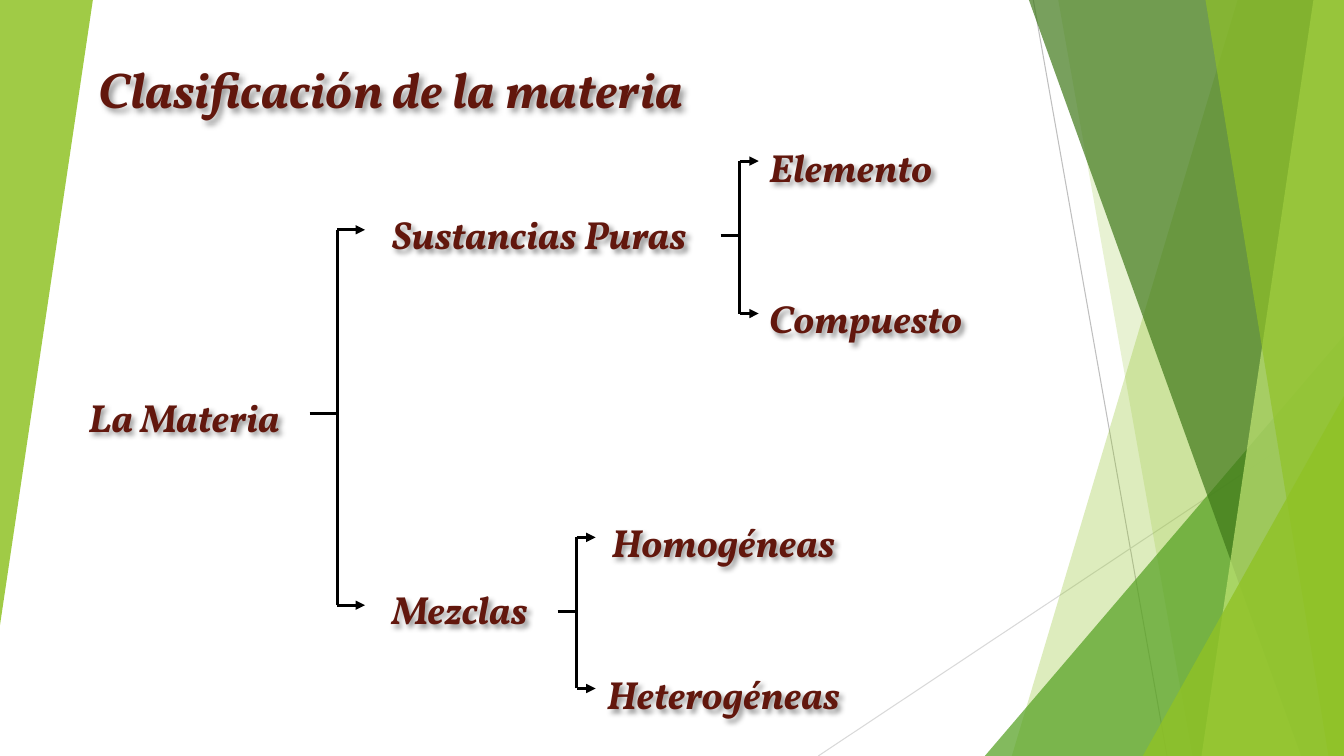
from lxml import etree
from pptx import Presentation
from pptx.dml.color import RGBColor
from pptx.enum.shapes import MSO_CONNECTOR, MSO_SHAPE
from pptx.enum.text import MSO_ANCHOR, MSO_AUTO_SIZE, PP_ALIGN
from pptx.oxml import parse_xml
from pptx.oxml.ns import nsdecls, qn
from pptx.util import Cm, Pt

STRAIGHT = MSO_CONNECTOR.STRAIGHT
TRIANGLE = MSO_SHAPE.ISOSCELES_TRIANGLE
TOP = MSO_ANCHOR.TOP
FIT_SHAPE = MSO_AUTO_SIZE.SHAPE_TO_FIT_TEXT
JUSTIFY = PP_ALIGN.JUSTIFY

MAROON = RGBColor(0x62, 0x17, 0x0D)
BLACK = RGBColor(0x00, 0x00, 0x00)
SILVER = RGBColor(0xBF, 0xBF, 0xBF)
PALE_GREY = RGBColor(0xD9, 0xD9, 0xD9)
LIME = RGBColor(0x90, 0xC2, 0x26)
GREEN = RGBColor(0x54, 0xA0, 0x21)
DARK_GREEN = RGBColor(0x3F, 0x78, 0x19)
PALE_LIME = RGBColor(0xC0, 0xE4, 0x74)

FONT = "Vollkorn"
WIDTH, HEIGHT = 33.87, 19.05
LABEL_HEIGHT = 1.55
STEM_RATIO = 0.49

# left, top, width, text
LABELS = [
    (1.98, 9.6, 7.34, "La Materia"),
    (9.63, 5.0, 8.61, "Sustancias Puras"),
    (9.63, 14.45, 8.61, "Mezclas"),
    (19.13, 3.3, 8.61, "Elemento"),
    (19.13, 7.11, 8.61, "Compuesto"),
    (15.16, 12.75, 8.61, "Homogéneas"),
    (15.04, 16.59, 8.61, "Heterogéneas"),
]
# left, top, width, height
BRACKETS = [
    (7.8, 5.79, 1.4, 9.46),
    (18.16, 4.06, 0.96, 3.84),
    (14.05, 13.54, 0.96, 3.81),
]


def add_line(shapes, start, end, color, weight, arrow=False):
    line = shapes.add_connector(STRAIGHT, *(Cm(value) for value in start + end))
    line.line.color.rgb = color
    line.line.width = Pt(weight)
    if arrow:
        tail = etree.SubElement(line.line._get_or_add_ln(), qn("a:tailEnd"))
        tail.set("type", "triangle")
    etree.SubElement(line._element.spPr, qn("a:effectLst"))


def paint(shape, color, opacity):
    """Fill a borderless shape with a colour of the given opacity in percent."""
    shape.shadow.inherit = False
    shape.line.fill.background()
    shape.fill.solid()
    shape.fill.fore_color.rgb = color
    color_element = shape._element.spPr.find(".//" + qn("a:srgbClr"))
    etree.SubElement(color_element, qn("a:alpha")).set("val", str(opacity * 1000))


def add_band(shapes, top_left, bottom_left, color, opacity):
    """Add a facet between a slanted left side and the right slide edge."""
    builder = shapes.build_freeform(Cm(top_left), 0)
    corners = [(WIDTH, 0), (WIDTH, HEIGHT), (bottom_left, HEIGHT)]
    builder.add_line_segments([(Cm(x), Cm(y)) for x, y in corners])
    paint(builder.convert_to_shape(), color, opacity)


def add_triangle(shapes, left, top, width, height, color, opacity):
    triangle = shapes.add_shape(TRIANGLE, Cm(left), Cm(top), Cm(width), Cm(height))
    triangle.adjustments[0] = 1
    paint(triangle, color, opacity)
    return triangle


def add_corner_triangle(shapes, left, top, color, opacity):
    add_triangle(shapes, left, top, WIDTH - left, HEIGHT - top, color, opacity)


def add_facets(shapes):
    add_line(shapes, (26.04, 0), (29.41, HEIGHT), SILVER, 0.75)
    add_line(shapes, (WIDTH, 10.24), (20.62, HEIGHT), PALE_GREY, 0.75)
    add_band(shapes, 31.19, 25.5, LIME, 30)
    add_band(shapes, 26.67, 30.05, LIME, 20)
    add_corner_triangle(shapes, 24.82, 8.46, GREEN, 72)
    add_band(shapes, 25.93, 32.79, DARK_GREEN, 70)
    add_band(shapes, 33.1, 30.28, PALE_LIME, 70)
    add_band(shapes, 30.38, 33.48, LIME, 65)
    add_corner_triangle(shapes, 28.8, 9.98, LIME, 80)
    add_triangle(shapes, 0, 0, 2.34, 15.75, LIME, 85).rotation = 180


def write_text(shape, text, size):
    """Write one bold italic line with a soft shadow."""
    frame = shape.text_frame
    frame.text = text
    frame.word_wrap = True
    frame.auto_size = FIT_SHAPE
    frame.vertical_anchor = TOP
    paragraph = frame.paragraphs[0]
    paragraph.alignment = JUSTIFY
    paragraph.line_spacing = 1.15
    paragraph.space_before = Pt(0)
    paragraph.space_after = Pt(6)
    font = paragraph.runs[0].font
    font.name = FONT
    font.size = Pt(size)
    font.bold = font.italic = True
    font.color.rgb = MAROON
    shape._element.spPr.append(parse_xml(
        f'<a:effectLst {nsdecls("a")}>'
        '<a:outerShdw blurRad="50800" dist="38100" dir="2700000" algn="tl" rotWithShape="0">'
        '<a:srgbClr val="000000"><a:alpha val="40000"/></a:srgbClr>'
        '</a:outerShdw></a:effectLst>'))


def add_title(slide, left, top, width, height):
    title = slide.shapes.title
    title.left, title.top = Cm(left), Cm(top)
    title.width, title.height = Cm(width), Cm(height)
    write_text(title, "Clasificación de la materia", 36)


def add_label(shapes, left, top, width, text):
    label = shapes.add_textbox(Cm(left), Cm(top), Cm(width), Cm(LABEL_HEIGHT))
    write_text(label, text, 28)


def add_bracket(shapes, left, top, width, height):
    """Add a stem that forks into an upper and a lower arrow."""
    lines = shapes.add_group_shape().shapes
    middle, right, bottom = left + width / 2, left + width, top + height
    stem = top + height * STEM_RATIO
    add_line(lines, (left, stem), (middle, stem), BLACK, 2.25)
    add_line(lines, (middle, bottom), (middle, top), BLACK, 2.25)
    for level in (top, bottom):
        add_line(lines, (middle, level), (right, level), BLACK, 2.25, arrow=True)


def main():
    presentation = Presentation()
    presentation.slide_width, presentation.slide_height = Cm(WIDTH), Cm(HEIGHT)
    slide = presentation.slides.add_slide(presentation.slide_layouts[5])
    add_facets(slide.shapes)
    add_title(slide, 2.24, 1.12, 31.62, 1.93)
    for label in LABELS:
        add_label(slide.shapes, *label)
    for bracket in BRACKETS:
        add_bracket(slide.shapes, *bracket)
    presentation.save("out.pptx")


if __name__ == "__main__":
    main()
